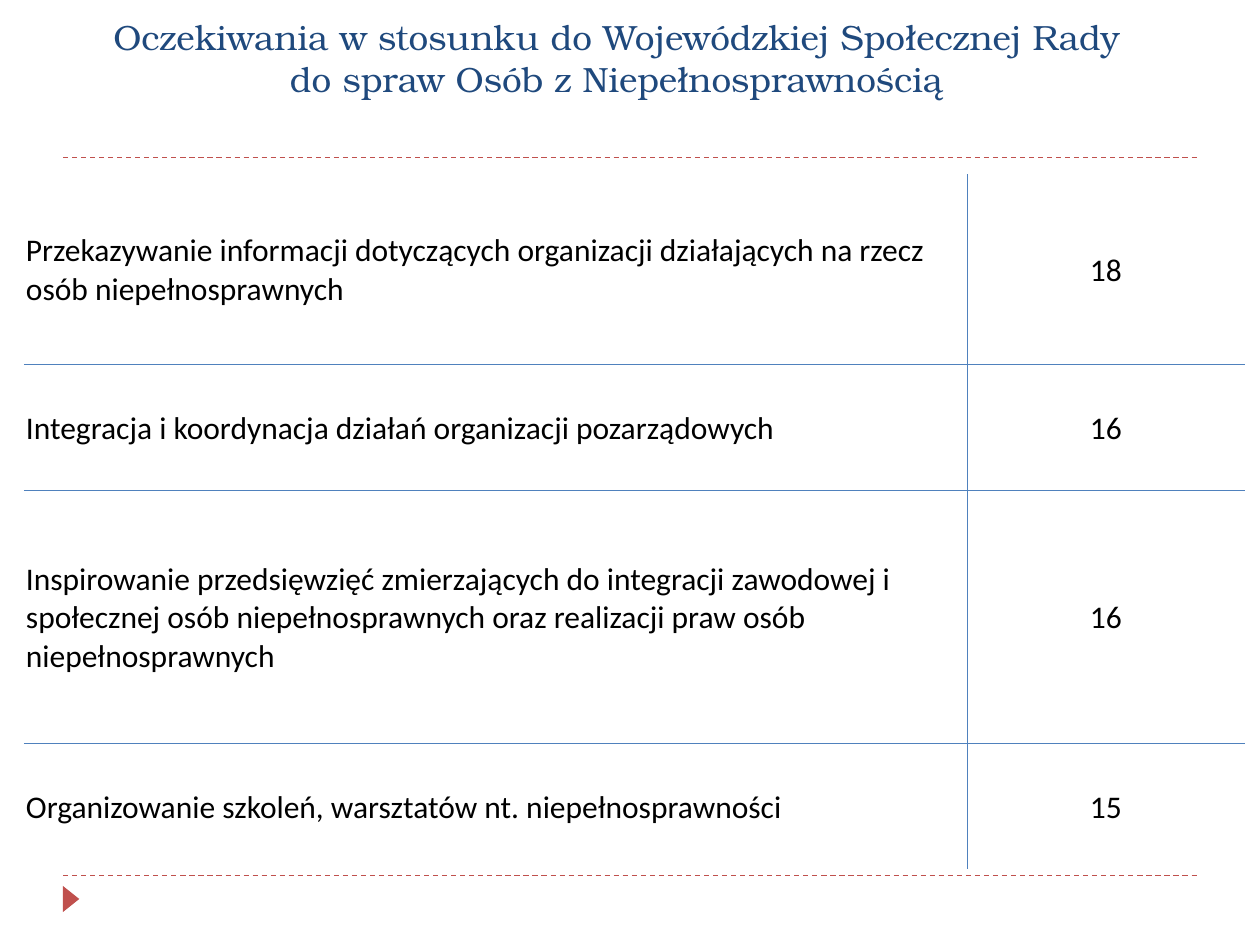
"""Build the slide listing the expectations towards the council for people with disabilities."""
from dataclasses import dataclass

import lxml.etree
import pptx
import pptx.dml.color
import pptx.enum.dml
import pptx.enum.shapes
import pptx.enum.text
import pptx.oxml
import pptx.oxml.ns
import pptx.util

Pt = pptx.util.Pt
COLOURS = {"title": "1F497D", "accent": "C0504D", "grid": "4F81BD", "edge": "FFFFFF", "text": "000000"}
COLUMN_WIDTHS = (538.6, 158.6)
ROW_UNIT = 72.2


@dataclass
class Expectation:
    """One table row: wording, number of answers and height in row units."""

    wording: str
    answers: int
    units: float


EXPECTATIONS = [
    Expectation("Przekazywanie informacji dotyczących organizacji działających na rzecz "
                "osób niepełnosprawnych", 18, 1.5),
    Expectation("Integracja i koordynacja działań organizacji pozarządowych", 16, 1),
    Expectation("Inspirowanie przedsięwzięć zmierzających do integracji zawodowej i społecznej "
                "osób niepełnosprawnych oraz realizacji praw osób niepełnosprawnych", 16, 2),
    Expectation("Organizowanie szkoleń, warsztatów nt. niepełnosprawności", 15, 1),
]


def colour(name: str) -> pptx.dml.color.RGBColor:
    """Return the named colour."""
    return pptx.dml.color.RGBColor.from_string(COLOURS[name])


def format_text(text_frame, font_name: str, size: float, colour_name: str, alignment) -> None:
    """Format every paragraph and run of a text frame."""
    for paragraph in text_frame.paragraphs:
        paragraph.alignment = alignment
        for run in paragraph.runs:
            run.font.name = font_name
            run.font.size = Pt(size)
            run.font.bold = False
            run.font.color.rgb = colour(colour_name)


def draw_rule(slide, top: float) -> None:
    """Draw a dashed rule across the slide."""
    rule = slide.shapes.add_connector(
        pptx.enum.shapes.MSO_CONNECTOR.STRAIGHT, Pt(36), Pt(top), Pt(684), Pt(top))
    rule.line.color.rgb = colour("accent")
    rule.line.width = Pt(0.75)
    rule.line.dash_style = pptx.enum.dml.MSO_LINE.DASH
    lxml.etree.SubElement(rule._element.spPr, pptx.oxml.ns.qn("a:effectLst"))


def draw_marker(slide) -> None:
    """Draw the triangle pointing right below the lower rule."""
    marker = slide.shapes.add_shape(
        pptx.enum.shapes.MSO_SHAPE.ISOSCELES_TRIANGLE, Pt(33.1), Pt(509), Pt(15), Pt(9.4))
    marker.rotation = 90
    marker.shadow.inherit = False
    marker.fill.solid()
    marker.fill.fore_color.rgb = colour("accent")
    marker.line.fill.background()


def set_title(slide) -> None:
    """Place and format the title."""
    title = slide.shapes.title
    title.left, title.top, title.width, title.height = Pt(0), Pt(12.2), Pt(711.4), Pt(48.2)
    frame = title.text_frame
    frame.text = ("Oczekiwania w stosunku do Wojewódzkiej Społecznej Rady \v"
                  "do spraw Osób z Niepełnosprawnością ")
    frame.word_wrap = True
    frame.auto_size = pptx.enum.text.MSO_AUTO_SIZE.NONE
    frame.vertical_anchor = pptx.enum.text.MSO_ANCHOR.BOTTOM
    format_text(frame, "TeX Gyre Bonum", 20, "title", pptx.enum.text.PP_ALIGN.CENTER)


def set_borders(cell, outer_sides: dict[str, bool]) -> None:
    """Give outer sides a white border and inner sides a thin blue one."""
    properties = cell._tc.get_or_add_tcPr()
    for side, is_outer in outer_sides.items():
        width, name = (1, "edge") if is_outer else (0.5, "grid")
        properties.append(pptx.oxml.parse_xml(
            f'<a:ln{side} {pptx.oxml.ns.nsdecls("a")} w="{Pt(width)}"><a:solidFill>'
            f'<a:srgbClr val="{COLOURS[name]}"/></a:solidFill></a:ln{side}>'))


def draw_table(slide, expectations: list[Expectation]) -> None:
    """Draw the expectations with their numbers of answers."""
    height = ROW_UNIT * sum(item.units for item in expectations)
    table = slide.shapes.add_table(
        len(expectations), len(COLUMN_WIDTHS), Pt(14.1), Pt(100),
        Pt(sum(COLUMN_WIDTHS)), Pt(height)).table
    table.first_row = False
    table.horz_banding = False
    for column, width in zip(table.columns, COLUMN_WIDTHS):
        column.width = Pt(width)
    alignments = (pptx.enum.text.PP_ALIGN.LEFT, pptx.enum.text.PP_ALIGN.CENTER)
    for row, item in enumerate(expectations):
        table.rows[row].height = Pt(ROW_UNIT * item.units)
        for column, value in enumerate((item.wording, str(item.answers))):
            cell = table.cell(row, column)
            cell.text_frame.text = value
            cell.margin_left = cell.margin_right = cell.margin_top = Pt(0.75)
            cell.margin_bottom = Pt(0)
            cell.vertical_anchor = pptx.enum.text.MSO_ANCHOR.MIDDLE
            format_text(cell.text_frame, "Calibri", 18, "text", alignments[column])
            set_borders(cell, {"L": column == 0, "R": column == len(COLUMN_WIDTHS) - 1,
                               "T": row == 0, "B": row == len(expectations) - 1})
            cell.fill.background()


def main() -> None:
    """Build and save the presentation."""
    presentation = pptx.Presentation()
    presentation.slide_width, presentation.slide_height = Pt(720), Pt(540)
    slide = presentation.slides.add_slide(presentation.slide_layouts[5])
    for top in (500.4, 90):
        draw_rule(slide, top)
    draw_marker(slide)
    set_title(slide)
    draw_table(slide, EXPECTATIONS)
    presentation.save("out.pptx")


if __name__ == "__main__":
    main()
